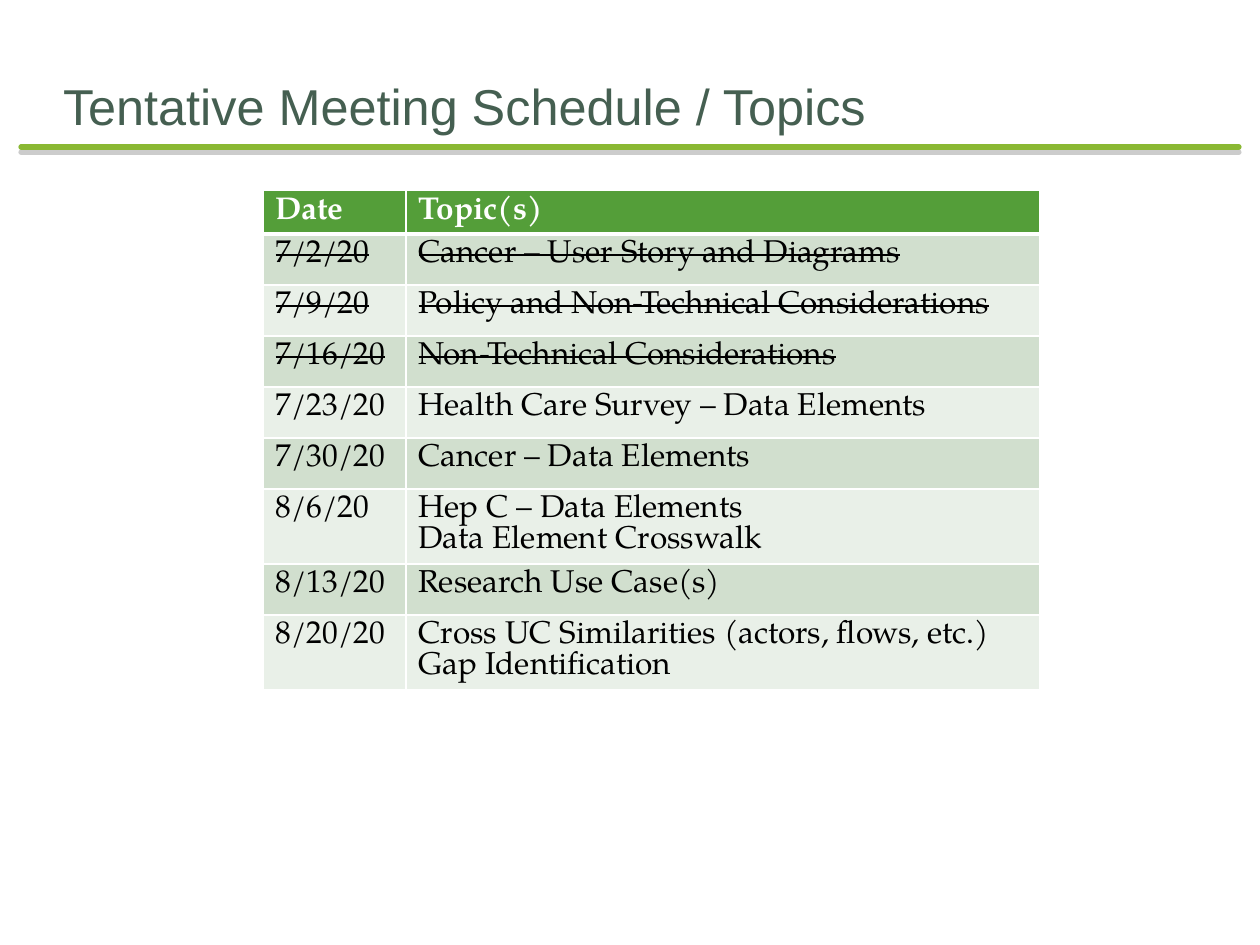
from lxml import etree
from pptx import Presentation
from pptx.dml.color import RGBColor
from pptx.enum.shapes import MSO_CONNECTOR
from pptx.enum.text import MSO_ANCHOR, MSO_AUTO_SIZE, PP_ALIGN
from pptx.oxml import parse_xml
from pptx.oxml.ns import nsdecls, qn
from pptx.util import Pt

STRAIGHT = MSO_CONNECTOR.STRAIGHT
BOTTOM = MSO_ANCHOR.BOTTOM
NO_AUTOFIT = MSO_AUTO_SIZE.NONE
LEFT = PP_ALIGN.LEFT

SCALE = 914400 // 126  # EMU per px
WHITE = RGBColor(0xFF, 0xFF, 0xFF)
BLACK = RGBColor(0x00, 0x00, 0x00)
SLATE = RGBColor(0x45, 0x5F, 0x51)
LIME = RGBColor(0x8A, 0xB8, 0x33)
GREEN = RGBColor(0x54, 0x9E, 0x39)
BANDS = (RGBColor(0xD1, 0xDF, 0xCE), RGBColor(0xE9, 0xF0, 0xE8))
SHADOW = RGBColor(0x80, 0x80, 0x80)

HEADER = ("Date", "Topic(s)")
MEETINGS = [  # date, topics, already held
    ("7/2/20", "Cancer – User Story and Diagrams", True),
    ("7/9/20", "Policy and Non-Technical Considerations", True),
    ("7/16/20", "Non-Technical Considerations", True),
    ("7/23/20", "Health Care Survey – Data Elements", False),
    ("7/30/20", "Cancer – Data Elements", False),
    ("8/6/20", "Hep C – Data Elements\nData Element Crosswalk", False),
    ("8/13/20", "Research Use Case(s)", False),
    ("8/20/20", "Cross UC Similarities (actors, flows, etc.)\nGap Identification", False),
]
COLUMN_WIDTHS = (143, 634)
HEADER_HEIGHT, ROW_HEIGHT, TALL_ROW_HEIGHT = 44, 51, 75


def px(length):
    return length * SCALE


def add_title(page, text):
    title = page.shapes.title
    title.left, title.top, title.width, title.height = map(px, (63, 63, 1134, 73))
    frame = title.text_frame
    frame.text = text
    frame.auto_size = NO_AUTOFIT
    frame.vertical_anchor = BOTTOM
    frame.margin_left = frame.margin_right = frame.margin_bottom = 0
    frame.margin_top = px(6)
    paragraph = frame.paragraphs[0]
    paragraph.alignment = LEFT
    font = paragraph.runs[0].font
    font.name, font.size = "Arial", Pt(28.8)
    font.color.rgb = SLATE


def add_rule(page, left, right, y):
    rule = page.shapes.add_connector(STRAIGHT, px(left), px(y), px(right), px(y))
    rule.line.color.rgb = LIME
    rule.line.width = Pt(3)
    rule.line._get_or_add_ln().set("cap", "rnd")
    rule._element.spPr.append(parse_xml(
        f'<a:effectLst {nsdecls("a")}>'
        f'<a:outerShdw dist="{Pt(3)}" dir="5400000" rotWithShape="0">'
        f'<a:srgbClr val="{SHADOW}"><a:alpha val="40000"/></a:srgbClr>'
        '</a:outerShdw></a:effectLst>'))


def set_borders(cell, bottom_width):
    properties = cell._tc.get_or_add_tcPr()
    for side, width in (("L", 1), ("R", 1), ("T", 1), ("B", bottom_width)):
        border = etree.SubElement(properties, qn(f"a:ln{side}"), w=str(Pt(width)))
        fill = etree.SubElement(border, qn("a:solidFill"))
        etree.SubElement(fill, qn("a:srgbClr"), val=str(WHITE))


def fill_cell(cell, text, fill, color, header=False, struck=False):
    set_borders(cell, 3 if header else 1)
    cell.fill.solid()
    cell.fill.fore_color.rgb = fill
    cell.text_frame.text = text
    for paragraph in cell.text_frame.paragraphs:
        paragraph.line_spacing = Pt(17.7)
        for span in paragraph.runs:
            font = span.font
            font.name, font.size, font.bold = "TeX Gyre Pagella", Pt(18), header
            font.color.rgb = color
            if struck:
                span._r.get_or_add_rPr().set("strike", "sngStrike")


def add_schedule(page, left, top):
    heights = [HEADER_HEIGHT] + [
        TALL_ROW_HEIGHT if "\n" in topics else ROW_HEIGHT for _, topics, _ in MEETINGS]
    table = page.shapes.add_table(
        len(heights), len(COLUMN_WIDTHS), px(left), px(top),
        px(sum(COLUMN_WIDTHS)), px(sum(heights))).table
    for column, width in zip(table.columns, COLUMN_WIDTHS):
        column.width = px(width)
    for row, height in zip(table.rows, heights):
        row.height = px(height)

    # Header row, then banded meeting rows
    for cell, text in zip(table.rows[0].cells, HEADER):
        fill_cell(cell, text, GREEN, WHITE, header=True)
    for index, (date, topics, held) in enumerate(MEETINGS):
        for cell, text in zip(table.rows[index + 1].cells, (date, topics)):
            fill_cell(cell, text, BANDS[index % 2], BLACK, struck=held)


def main():
    deck = Presentation()
    deck.slide_width, deck.slide_height = px(1260), px(945)
    page = deck.slides.add_slide(deck.slide_layouts[5])
    add_rule(page, 21, 1239, 147)
    add_title(page, "Tentative Meeting Schedule / Topics")
    add_schedule(page, 263, 190)
    deck.save("out.pptx")


if __name__ == "__main__":
    main()
